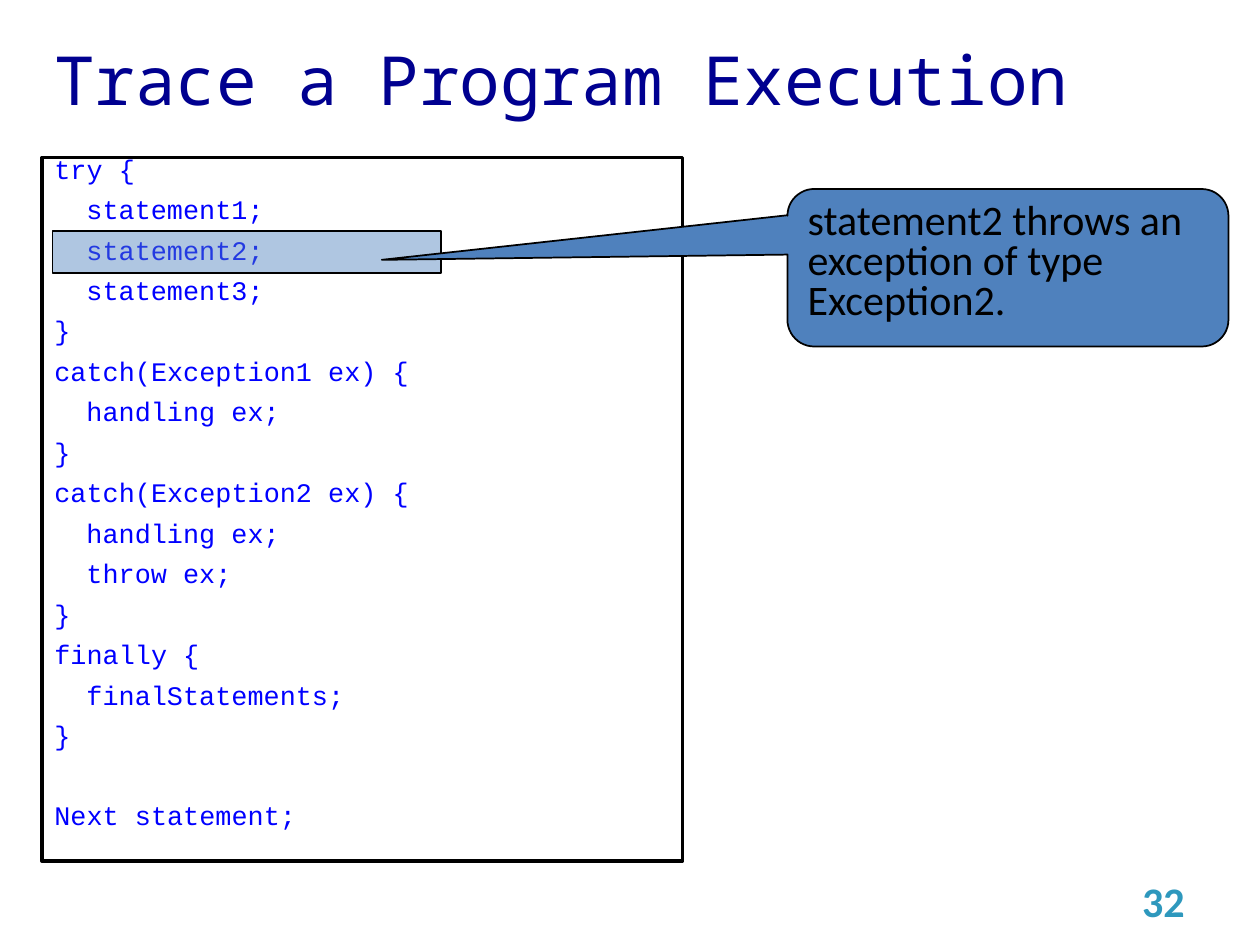
from pptx import Presentation
from pptx.dml.color import RGBColor
from pptx.enum.shapes import MSO_SHAPE as Shape
from pptx.enum.text import MSO_ANCHOR as Anchor, PP_ALIGN as Align
from pptx.oxml.xmlchemy import OxmlElement as Element
from pptx.util import Pt

COLORS = {
    "title": "000090",
    "code": "0000FF",
    "ink": "000000",
    "paper": "FFFFFF",
    "accent": "4F81BD",
    "number": "2E98BD",
}
CODE_SIZE = 15.3
CODE_GAP = 12.1
CODE_SPACING = 0.6
LINE_HEIGHT = CODE_SIZE * 1.133 * CODE_SPACING
STEP = CODE_SIZE * 1.2
HANGING = 27

PROGRAM = [
    (0, "try {"),
    (1, "statement1;"),
    (1, "statement2;"),
    (1, "statement3;"),
    (0, "}"),
    (0, "catch(Exception1 ex) {"),
    (1, "handling ex;"),
    (0, "}"),
    (0, "catch(Exception2 ex) {"),
    (1, "handling ex;"),
    (1, "throw ex;"),
    (0, "}"),
    (0, "finally {"),
    (1, "finalStatements;"),
    (0, "}"),
]
AFTERWARDS = "Next statement;"


class TraceSlide:
    def __init__(self, deck):
        self.slide = deck.slides.add_slide(deck.slide_layouts[6])

    def color(self, name):
        return RGBColor.from_string(COLORS[name])

    def run(self, paragraph, words, font, size, color, bold=False):
        run = paragraph.add_run()
        run.text = words
        run.font.name = font
        run.font.size = Pt(size)
        run.font.bold = bold
        run.font.color.rgb = self.color(color)

    def label(self, box, words, font, size, color, align=Align.LEFT, bold=False):
        frame = self.slide.shapes.add_textbox(*map(Pt, box)).text_frame
        frame.word_wrap = True
        frame.vertical_anchor = Anchor.MIDDLE
        frame.paragraphs[0].alignment = align
        self.run(frame.paragraphs[0], words, font, size, color, bold)

    def panel(self, kind, box, fill, line_width, opacity=None):
        panel = self.slide.shapes.add_shape(kind, *map(Pt, box))
        panel.shadow.inherit = False
        panel.fill.solid()
        panel.fill.fore_color.rgb = self.color(fill)
        panel.line.color.rgb = self.color("ink")
        panel.line.width = Pt(line_width)
        panel.text_frame.word_wrap = True
        panel.text_frame.vertical_anchor = Anchor.TOP
        if opacity is not None:
            alpha = Element("a:alpha")
            alpha.set("val", str(opacity * 1000))
            panel.fill._xPr.find(".//{*}solidFill/{*}srgbClr").append(alpha)
        return panel

    def code_line(self, paragraph, depth, words, gap=CODE_GAP):
        paragraph.alignment = Align.LEFT
        paragraph.line_spacing = CODE_SPACING
        paragraph.space_before = Pt(gap)
        properties = paragraph._p.get_or_add_pPr()
        properties.set("marL", str(Pt(HANGING + depth * STEP)))
        properties.set("indent", str(Pt(-HANGING)))
        self.run(paragraph, words, "Courier New", CODE_SIZE, "code")

    def listing(self, box, program, afterwards):
        frame = self.panel(Shape.RECTANGLE, box, "paper", 2).text_frame
        for index, (depth, words) in enumerate(program):
            paragraph = frame.add_paragraph() if index else frame.paragraphs[0]
            self.code_line(paragraph, depth, words, CODE_GAP if index else 0)
        self.code_line(frame.add_paragraph(), 0, afterwards, 2 * CODE_GAP + LINE_HEIGHT)

    def callout(self, box, pointer, words):
        callout = self.panel(Shape.ROUNDED_RECTANGULAR_CALLOUT, box, "accent", 1)
        for index, value in enumerate(pointer):
            callout.adjustments[index] = value
        paragraph = callout.text_frame.paragraphs[0]
        paragraph.alignment = Align.LEFT
        paragraph.line_spacing = 0.8
        self.run(paragraph, words, "Calibri", 24, "ink")


def main():
    deck = Presentation()
    deck.slide_width, deck.slide_height = Pt(720), Pt(540)
    trace = TraceSlide(deck)
    trace.label((24, 24, 642, 42), "Trace a Program Execution",
                "Noto Sans Mono", 38.7, "title")
    trace.listing((24, 90, 366, 402), PROGRAM, AFTERWARDS)
    trace.panel(Shape.RECTANGLE, (30, 132, 222, 24), "accent", 1, opacity=45)
    trace.callout((450, 108, 252, 90), (-1.42, -0.05, 0.17),
                  "statement2 throws an exception of type Exception2.")
    trace.label((516, 500, 168, 29), "32", "Calibri", 24, "number",
                Align.RIGHT, bold=True)
    deck.save("out.pptx")


if __name__ == "__main__":
    main()
